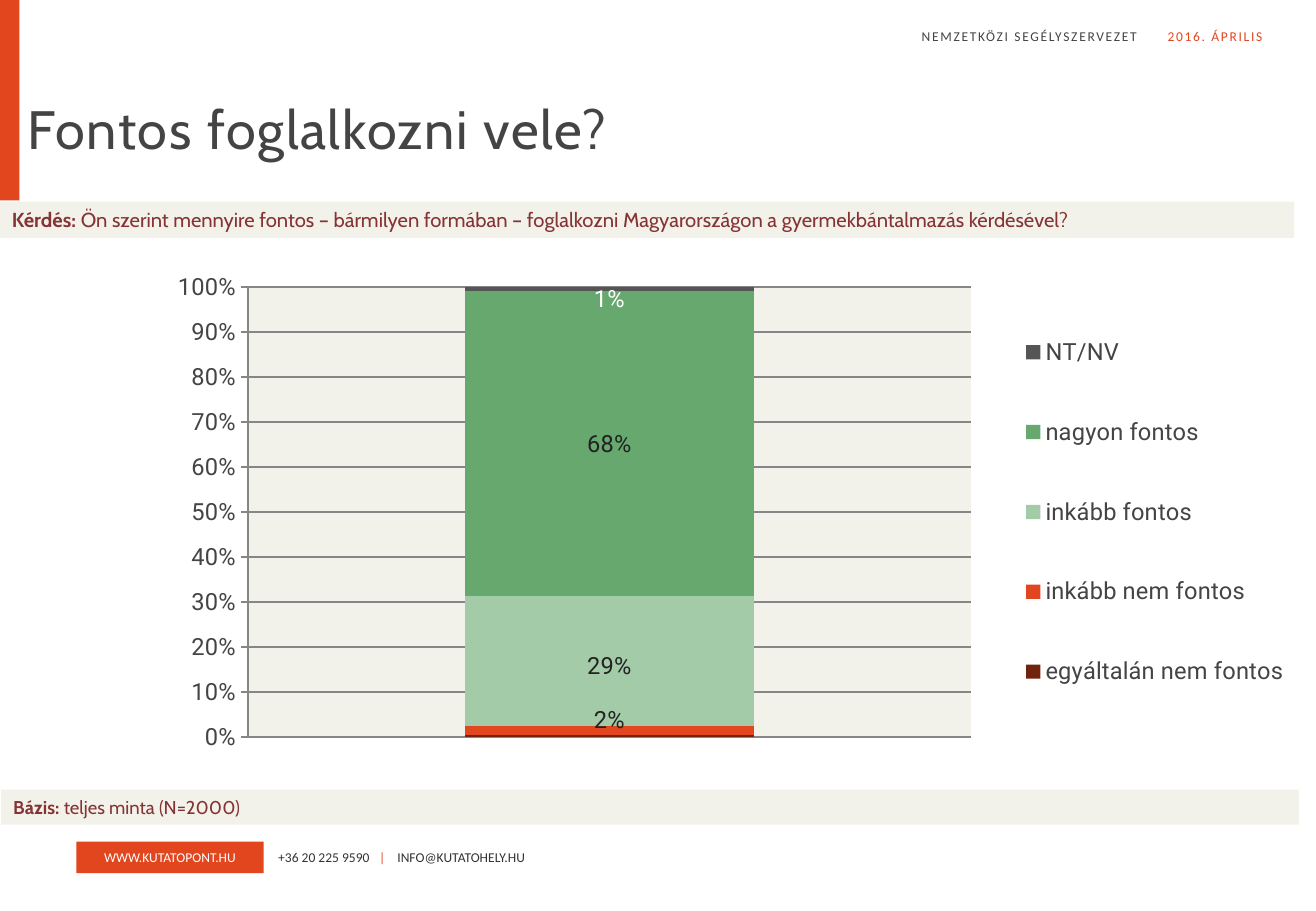
from pptx import Presentation
from pptx.chart.data import CategoryChartData
from pptx.dml.color import RGBColor
from pptx.enum.chart import XL_CHART_TYPE as ChartType, XL_LEGEND_POSITION as LegendPosition
from pptx.enum.chart import XL_TICK_MARK as TickMark
from pptx.enum.shapes import MSO_SHAPE as Preset
from pptx.enum.text import MSO_ANCHOR as Anchor, PP_ALIGN as Align
from pptx.oxml import parse_xml
from pptx.oxml.ns import nsdecls
from pptx.util import Inches, Pt

COLORS = {
    "accent": "E1461F", "text": "444444", "contact": "333333", "question": "863333",
    "band": "F2F2EB", "white": "FFFFFF", "grid": "868686", "label": "222222",
    "not_at_all": "71230F", "rather": "A3CBA8", "very": "66A86E", "unknown": "555555",
}

# Text boxes: area, runs (text, color, bold), font, size, spacing, align, anchor, side inset, fill
AREAS = [
    ((4.73, 0.23, 4.63, 0.46), [("NEMZETKÖZI SEGÉLYSZERVEZET", "text", False)],
     "Calibri", 8, 1, Align.RIGHT, Anchor.TOP, 0, None),
    ((9.4, 0.23, 0.99, 0.46), [("2016. ÁPRILIS", "accent", False)],
     "Calibri", 8, 1, Align.RIGHT, Anchor.TOP, 0, None),
    ((0.63, 6.93, 1.54, 0.26), [("WWW.KUTATOPONT.HU", "white", False)],
     "Calibri", 8, 0, Align.CENTER, Anchor.MIDDLE, 0, "accent"),
    ((2.29, 6.93, 0.8, 0.26), [("+36 20 225 9590", "contact", False)],
     "Calibri", 8, 0, Align.LEFT, Anchor.MIDDLE, 0, None),
    ((3.09, 6.93, 0.11, 0.26), [("|", "accent", False)],
     "Calibri", 8, 0, Align.CENTER, Anchor.MIDDLE, 0, None),
    ((3.27, 6.93, 2.02, 0.26), [("INFO@KUTATOHELY.HU", "contact", False)],
     "Calibri", 8, 0, Align.LEFT, Anchor.MIDDLE, 0, None),
    ((0, 0, 0.16, 1.65), [], "Calibri", 8, 0, Align.LEFT, Anchor.TOP, 0, "accent"),
    ((0.01, 6.5, 10.68, 0.29),
     [("Bázis: ", "question", True), ("teljes minta (N=2000)", "question", False)],
     "Cabin", 11, 0, Align.LEFT, Anchor.MIDDLE, 0.1, "band"),
    ((0, 1.66, 10.65, 0.3),
     [("Kérdés: ", "question", True),
      ("Ön szerint mennyire fontos – bármilyen formában – foglalkozni Magyarországon "
       "a gyermekbántalmazás kérdésével?", "question", False)],
     "Cabin", 12, 0, Align.LEFT, Anchor.MIDDLE, 0.1, "band"),
    ((0.23, 0.79, 10.18, 0.83), [("Fontos foglalkozni vele?", "text", False)],
     "Cabin", 32, 1, Align.LEFT, Anchor.TOP, 0, None),
]

# Answers: name, percent, fill, label color (None for no label), label shift down
ANSWERS = [
    ("egyáltalán nem fontos", 0.39, "not_at_all", None, 0),
    ("inkább nem fontos", 2, "accent", "label", -0.02),
    ("inkább fontos", 29, "rather", "label", 0.01),
    ("nagyon fontos", 68, "very", "label", 0),
    ("NT/NV", 1, "unknown", "white", 0.02),
]
LABEL_FORMAT = '0"%"'
CHART_AREA = (0.37, 2.19, 10.44, 4.31)
PLOT_LAYOUT = (0.16, 0.04, 0.57, 0.86)
LEGEND_LAYOUT = (0.76, 0.04, 0.23, 0.86)


def rgb(name):
    return RGBColor.from_string(COLORS[name])


def style(font, name, size, color):
    font.name, font.size = name, Pt(size)
    font.color.rgb = rgb(color)


def add_area(slide, area, runs, font, size, spacing, align, anchor, inset, fill):
    place = [Inches(value) for value in area]
    if fill:
        box = slide.shapes.add_shape(Preset.RECTANGLE, *place)
        box.shadow.inherit = False
        box.fill.solid()
        box.fill.fore_color.rgb = rgb(fill)
        box.line.fill.background()
    else:
        box = slide.shapes.add_textbox(*place)
    frame = box.text_frame
    frame.word_wrap = True
    frame.vertical_anchor = anchor
    frame.margin_left = frame.margin_right = Inches(inset)
    frame.margin_top = frame.margin_bottom = 0
    para = frame.paragraphs[0]
    para.alignment = align
    for text, color, bold in runs:
        span = para.add_run()
        span.text = text
        style(span.font, font, size, color)
        span.font.bold = bold
        if spacing:
            span.font._element.set("spc", str(spacing * 100))


def make_layout(values, inner=False):
    target = '<c:layoutTarget val="inner"/>' if inner else ""
    modes = '<c:xMode val="edge"/><c:yMode val="edge"/>' if len(values) == 4 else ""
    sizes = "".join(f'<c:{key} val="{value}"/>' for key, value in zip("xywh", values))
    return parse_xml(f'<c:layout {nsdecls("c")}><c:manualLayout>{target}{modes}{sizes}'
                     "</c:manualLayout></c:layout>")


def shift_label(series, color, shift):
    style(series.points[0].data_label.font, "Roboto", 14, color)
    label = series.data_labels._element.find("{*}dLbl")
    layout = make_layout((0, shift))
    label.find("{*}idx").addnext(layout)
    number_format = parse_xml(f'<c:numFmt {nsdecls("c")} sourceLinked="0"/>')
    number_format.set("formatCode", LABEL_FORMAT)
    layout.addnext(number_format)


def add_answer_chart(slide):
    data = CategoryChartData()
    data.categories = ["1"]
    for name, percent, *_ in ANSWERS:
        data.add_series(name, [percent])
    place = [Inches(value) for value in CHART_AREA]
    chart = slide.shapes.add_chart(ChartType.COLUMN_STACKED_100, *place, data).chart
    style(chart.font, "Roboto", 14, "text")
    chart.has_title = False

    # Columns and their labels
    plot = chart.plots[0]
    plot.gap_width, plot.overlap = 150, 100
    plot.vary_by_categories = False
    for series, (_, _, fill, label_color, shift) in zip(plot.series, ANSWERS):
        series.format.fill.solid()
        series.format.fill.fore_color.rgb = rgb(fill)
        if label_color:
            labels = series.data_labels
            labels.show_value = True
            labels.number_format = LABEL_FORMAT
            labels.number_format_is_linked = False
            style(labels.font, "Roboto", 14, label_color)
        if shift:
            shift_label(series, label_color, shift)

    # Axes
    chart.category_axis.visible = False
    axis = chart.value_axis
    axis.minimum_scale, axis.maximum_scale, axis.major_unit = 0, 1, 0.1
    axis.major_tick_mark = TickMark.OUTSIDE
    axis.tick_labels.number_format = "0%"
    axis.tick_labels.number_format_is_linked = False
    for line in (axis.format.line, axis.major_gridlines.format.line):
        line.color.rgb = rgb("grid")
        line.width = Pt(0.75)

    # Legend
    chart.has_legend = True
    legend = chart.legend
    legend.position = LegendPosition.RIGHT
    legend.include_in_layout = False
    style(legend.font, "Roboto", 14, "text")
    for old in legend._element.findall("{*}layout"):
        legend._element.remove(old)
    legend._element.find("{*}legendPos").addnext(make_layout(LEGEND_LAYOUT))

    # Plot area place and fill
    area = chart._chartSpace.chart.plotArea
    for old in area.findall("{*}layout"):
        area.remove(old)
    area.insert(0, make_layout(PLOT_LAYOUT, inner=True))
    area.append(parse_xml(f'<c:spPr {nsdecls("c", "a")}><a:solidFill><a:srgbClr '
                          f'val="{COLORS["band"]}"/></a:solidFill></c:spPr>'))


def main():
    deck = Presentation()
    deck.slide_width, deck.slide_height = Inches(10.83), Inches(7.5)
    page = deck.slides.add_slide(deck.slide_layouts[6])
    for area in AREAS:
        add_area(page, *area)
    add_answer_chart(page)
    deck.save("out.pptx")


if __name__ == "__main__":
    main()
